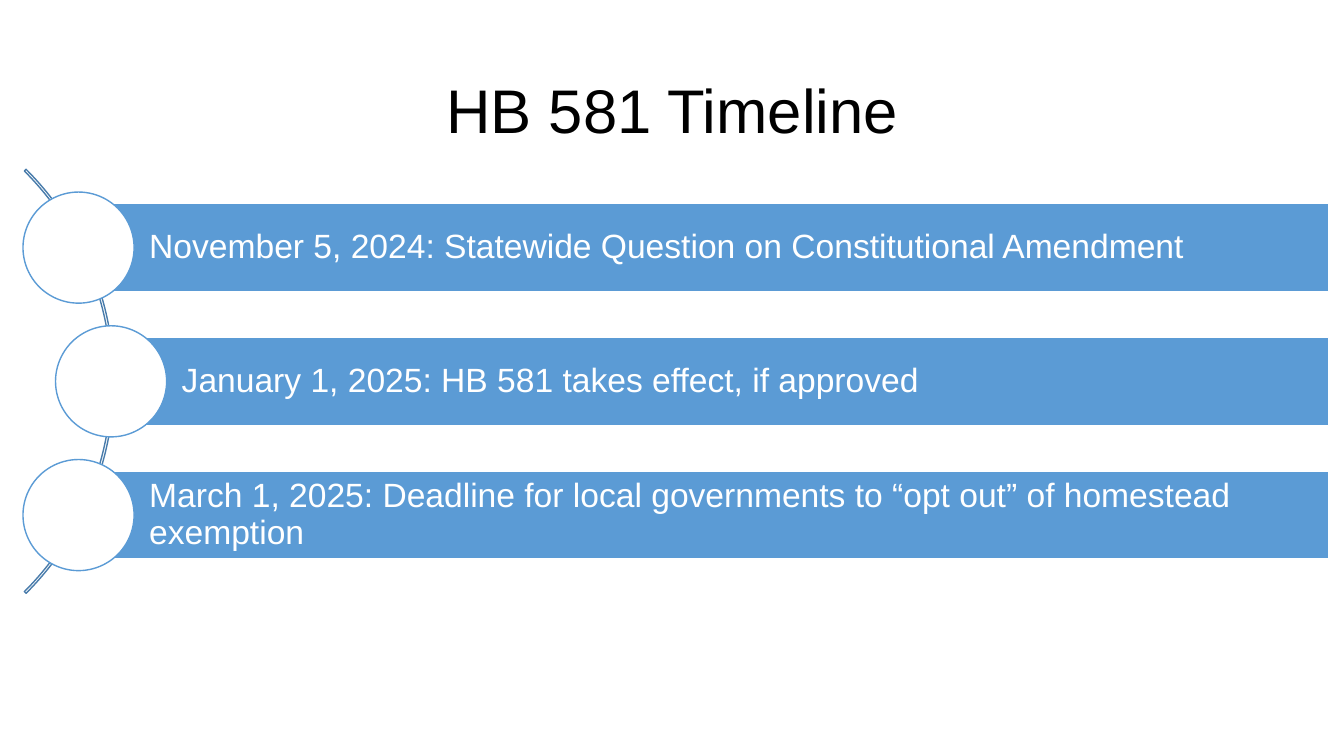
from dataclasses import dataclass

from pptx import Presentation
from pptx.dml.color import RGBColor
from pptx.enum import shapes, text
from pptx.util import Cm, Pt


@dataclass(frozen=True)
class Theme:
    font: str = "Arial"
    black: RGBColor = RGBColor(0, 0, 0)
    white: RGBColor = RGBColor(255, 255, 255)
    blue: RGBColor = RGBColor(0x5B, 0x9B, 0xD5)
    arc_blue: RGBColor = RGBColor(0x49, 0x7C, 0xAB)
    title_size: Pt = Pt(44)
    label_size: Pt = Pt(24)
    line_width: Pt = Pt(1)


THEME = Theme()
SLIDE_W, SLIDE_H = 33.87, 19.05
MID_Y = 9.61
PITCH = 3.37
BAR_H = 2.22
BAR_RIGHT = 33.48
CIRCLE_D = 2.8
ARC_LEFT, ARC_D = -12.24, 15.11

# Centre of each marker and the text of its bar
MILESTONES = [
    (1.98, "November 5, 2024: Statewide Question on Constitutional Amendment"),
    (2.8, "January 1, 2025: HB 581 takes effect, if approved"),
    (1.98, "March 1, 2025: Deadline for local governments to “opt out” of homestead exemption"),
]


def write(tf, words, size, color, align):
    tf.word_wrap = True
    tf.vertical_anchor = text.MSO_ANCHOR.MIDDLE
    p = tf.paragraphs[0]
    p.alignment = align
    p.line_spacing = 0.9
    r = p.add_run()
    r.text = words
    r.font.name = THEME.font
    r.font.size = size
    r.font.color.rgb = color


def add_title(s, words):
    box = s.shapes.add_textbox(Cm(2.34), Cm(1.02), Cm(29.21), Cm(3.68))
    write(box.text_frame, words, THEME.title_size, THEME.black, text.PP_ALIGN.CENTER)


def add_outlined(s, kind, left, top, width, height, line, fill=None):
    """Add a flat preset shape, measured in centimetres; no fill leaves it open."""
    sp = s.shapes.add_shape(kind, Cm(left), Cm(top), Cm(width), Cm(height))
    sp.shadow.inherit = False
    sp.line.color.rgb = line
    sp.line.width = THEME.line_width
    if fill is None:
        sp.fill.background()
    else:
        sp.fill.solid()
        sp.fill.fore_color.rgb = fill
    return sp


def add_arc(s):
    arc = add_outlined(s, shapes.MSO_SHAPE.BLOCK_ARC, ARC_LEFT, MID_Y - ARC_D / 2,
                       ARC_D, ARC_D, THEME.arc_blue)
    for i, value in enumerate((189, 27, 0.004)):
        arc.adjustments[i] = value


def add_milestone(s, x, y, words):
    """Add a bar that starts at x, centred on y, with its round marker."""
    bar = add_outlined(s, shapes.MSO_SHAPE.RECTANGLE, x, y - BAR_H / 2,
                       BAR_RIGHT - x, BAR_H, THEME.white, THEME.blue)
    tf = bar.text_frame
    tf.margin_left = Cm(1.78)
    tf.margin_top = tf.margin_right = tf.margin_bottom = Cm(0.18)
    write(tf, words, THEME.label_size, THEME.white, text.PP_ALIGN.LEFT)
    add_outlined(s, shapes.MSO_SHAPE.OVAL, x - CIRCLE_D / 2, y - CIRCLE_D / 2,
                 CIRCLE_D, CIRCLE_D, THEME.blue, THEME.white)


def main():
    prs = Presentation()
    prs.slide_width, prs.slide_height = Cm(SLIDE_W), Cm(SLIDE_H)
    s = prs.slides.add_slide(prs.slide_layouts[6])
    add_title(s, "HB 581 Timeline")
    add_arc(s)
    for i, (x, words) in enumerate(MILESTONES):
        add_milestone(s, x, MID_Y + (i - 1) * PITCH, words)
    prs.save("out.pptx")


if __name__ == "__main__":
    main()
